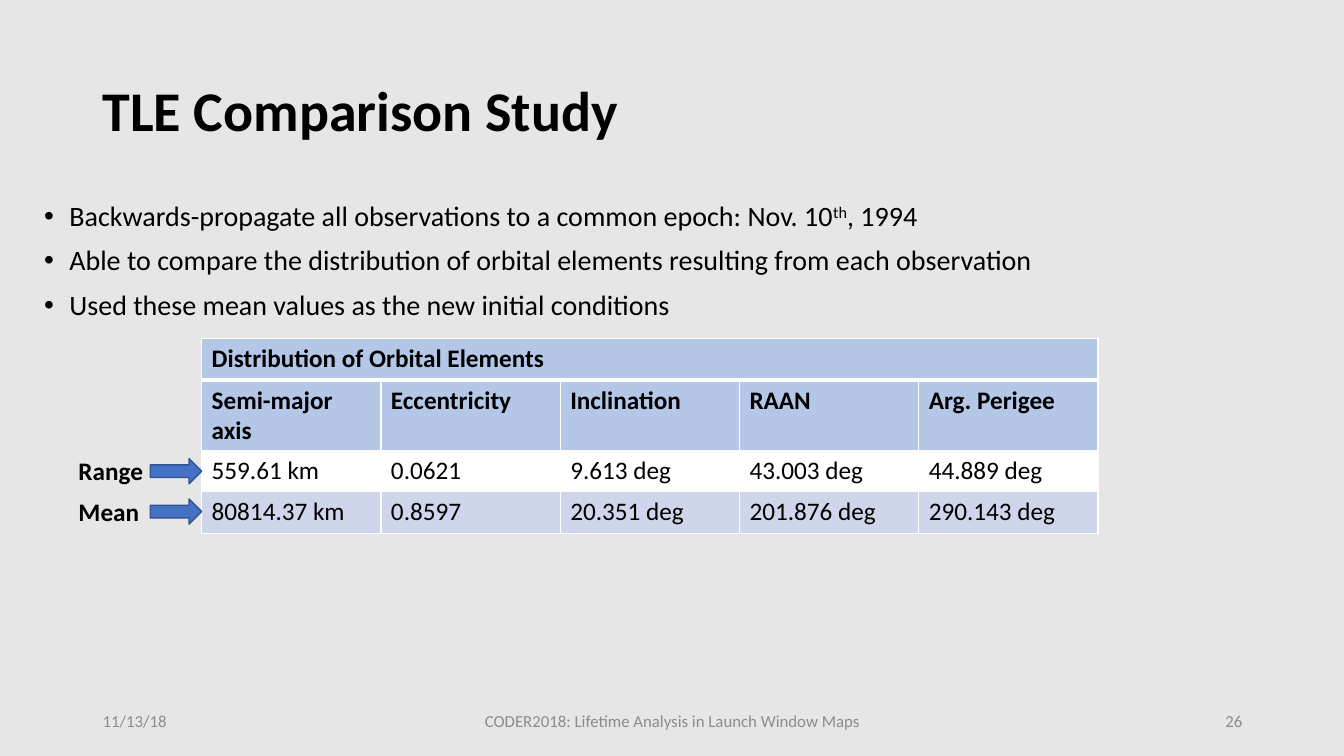
from dataclasses import dataclass

from lxml.etree import SubElement
from pptx import Presentation
from pptx.dml.color import RGBColor
from pptx.enum.shapes import MSO_SHAPE
from pptx.enum.text import MSO_ANCHOR, PP_ALIGN
from pptx.oxml.ns import qn
from pptx.util import Inches, Pt


@dataclass(frozen=True)
class Theme:
    """Colours, font and type sizes of the slide."""
    font: str = "Calibri"
    background: str = "E7E6E6"
    ink: str = "000000"
    muted: str = "8C8C8C"
    white: str = "FFFFFF"
    header: str = "B4C7E7"
    band: str = "CFD5EA"
    arrow: str = "4472C4"
    arrow_line: str = "325491"
    title_size: int = 40
    body_size: int = 20
    table_size: int = 18
    footer_size: int = 12


THEME = Theme()
BULLETS = [
    "Backwards-propagate all observations to a common epoch: Nov. 10^th^, 1994",
    "Able to compare the distribution of orbital elements resulting from each observation",
    "Used these mean values as the new initial conditions",
]
TABLE_TITLE = "Distribution of Orbital Elements"
TABLE_ROWS = [
    [TABLE_TITLE, "", "", "", ""],
    ["Semi-major axis", "Eccentricity", "Inclination", "RAAN", "Arg. Perigee"],
    ["559.61 km", "0.0621", "9.613 deg", "43.003 deg", "44.889 deg"],
    ["80814.37 km", "0.8597", "20.351 deg", "201.876 deg", "290.143 deg"],
]
ROW_HEIGHTS = [0.41, 0.7, 0.41, 0.41]
ROW_FILLS = [THEME.header, THEME.header, THEME.white, THEME.band]
FOOTERS = [
    (0.92, 3, "11/13/18", PP_ALIGN.LEFT),
    (4.42, 4.5, "CODER2018: Lifetime Analysis in Launch Window Maps", PP_ALIGN.CENTER),
    (9.42, 3, "26", PP_ALIGN.RIGHT),
]


def write_text(paragraph, text, size, color=THEME.ink, bold=False, align=PP_ALIGN.LEFT):
    """Write formatted text, raising the parts between carets."""
    paragraph.alignment = align
    for index, part in enumerate(text.split("^")):
        run = paragraph.add_run()
        run.text = part
        run.font.name = THEME.font
        run.font.size = Pt(size)
        run.font.bold = bold
        run.font.color.rgb = RGBColor.from_string(color)
        if index % 2:
            run.font._element.set("baseline", "30000")


def add_frame(slide, left, top, width, height, anchor=MSO_ANCHOR.TOP, wrap=True):
    """Add a text box and return its text frame."""
    box = slide.shapes.add_textbox(Inches(left), Inches(top), Inches(width), Inches(height))
    frame = box.text_frame
    frame.word_wrap = wrap
    frame.vertical_anchor = anchor
    return frame


def add_bullets(slide):
    """Add the bulleted list."""
    frame = add_frame(slide, 0.34, 1.96, 12.34, 1.4)
    for index, text in enumerate(BULLETS):
        paragraph = frame.add_paragraph() if index else frame.paragraphs[0]
        paragraph.line_spacing = 0.9
        paragraph.space_before = Pt(10 if index else 0)
        properties = paragraph._p.get_or_add_pPr()
        properties.set("marL", str(Inches(0.25)))
        properties.set("indent", str(-Inches(0.25)))
        SubElement(properties, qn("a:buFont"), typeface="Arial")
        SubElement(properties, qn("a:buChar"), char="•")
        write_text(paragraph, text, THEME.body_size)


def add_borders(cell, **widths):
    """Draw white cell borders with the given widths in points."""
    properties = cell._tc.get_or_add_tcPr()
    for side in "LRTB":
        line = SubElement(properties, qn(f"a:ln{side}"), w=str(Pt(widths.get(side, 1))))
        fill = SubElement(line, qn("a:solidFill"))
        SubElement(fill, qn("a:srgbClr"), val=THEME.white)


def add_orbit_table(slide):
    """Add the table of orbital elements."""
    columns = len(TABLE_ROWS[0])
    table = slide.shapes.add_table(
        len(TABLE_ROWS), columns, Inches(2), Inches(3.36),
        Inches(8.89), Inches(sum(ROW_HEIGHTS))).table
    for row_index, values in enumerate(TABLE_ROWS):
        table.rows[row_index].height = Inches(ROW_HEIGHTS[row_index])
        for column_index, text in enumerate(values):
            cell = table.cell(row_index, column_index)
            add_borders(cell, **{0: {"B": 3}, 1: {"T": 3}}.get(row_index, {}))
            cell.fill.solid()
            cell.fill.fore_color.rgb = RGBColor.from_string(ROW_FILLS[row_index])
            if text:
                write_text(cell.text_frame.paragraphs[0], text, THEME.table_size,
                           bold=row_index < 2)
    table.cell(0, 0).merge(table.cell(0, columns - 1))


def add_row_label(slide, text, top, width):
    """Add a bold label and the arrow that points to its table row."""
    frame = add_frame(slide, 0.68, top, width, 0.4, wrap=False)
    write_text(frame.paragraphs[0], text, THEME.table_size, bold=True)
    arrow = slide.shapes.add_shape(
        MSO_SHAPE.RIGHT_ARROW, Inches(1.49), Inches(top + 0.08), Inches(0.51), Inches(0.25))
    arrow.shadow.inherit = False
    arrow.fill.solid()
    arrow.fill.fore_color.rgb = RGBColor.from_string(THEME.arrow)
    arrow.line.color.rgb = RGBColor.from_string(THEME.arrow_line)
    arrow.line.width = Pt(1)


def main():
    """Build and save the slide."""
    presentation = Presentation()
    presentation.slide_width = Inches(13.33)
    presentation.slide_height = Inches(7.5)
    slide = presentation.slides.add_slide(presentation.slide_layouts[6])
    slide.background.fill.solid()
    slide.background.fill.fore_color.rgb = RGBColor.from_string(THEME.background)

    title = add_frame(slide, 0.92, 0.4, 11.5, 1.45, anchor=MSO_ANCHOR.MIDDLE).paragraphs[0]
    title.line_spacing = 0.9
    write_text(title, "TLE Comparison Study", THEME.title_size, bold=True)
    for left, width, text, align in FOOTERS:
        frame = add_frame(slide, left, 6.95, width, 0.4, anchor=MSO_ANCHOR.MIDDLE)
        write_text(frame.paragraphs[0], text, THEME.footer_size, color=THEME.muted, align=align)
    add_orbit_table(slide)
    add_bullets(slide)
    add_row_label(slide, "Range", 4.47, 0.85)
    add_row_label(slide, "Mean", 4.87, 0.81)
    presentation.save("out.pptx")


if __name__ == "__main__":
    main()
